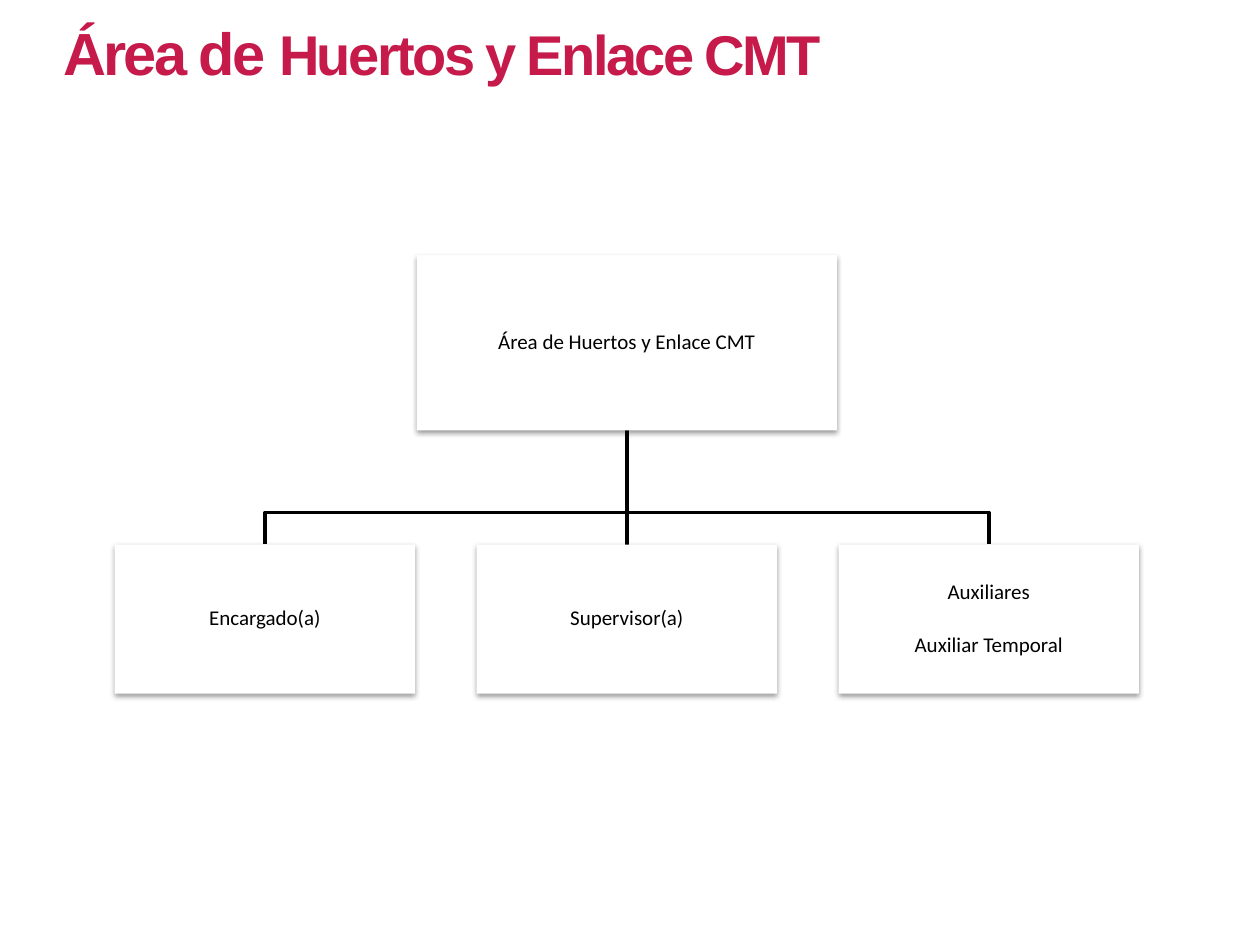
from lxml import etree
from pptx import Presentation, util as u
from pptx.dml.color import RGBColor
from pptx.enum import shapes, text
from pptx.oxml.ns import qn

CRIMSON = RGBColor(0xC5, 0x1A, 0x4A)
BLACK = RGBColor(0, 0, 0)
WHITE = RGBColor(0xFF, 0xFF, 0xFF)

HEADING = [("Área de ", 34), ("Huertos y Enlace CMT", 32)]
AREA = ["Área de Huertos y Enlace CMT"]
STAFF = [["Encargado(a)"], ["Supervisor(a)"], ["Auxiliares", "Auxiliar Temporal"]]

CARD_FRAME = dict(word_wrap=True, vertical_anchor=text.MSO_ANCHOR.MIDDLE,
                  **{f"margin_{side}": u.Inches(0.01)
                     for side in ("left", "right", "top", "bottom")})
CARD_FONT = dict(name="Calibri", size=u.Pt(12))
HEADING_FRAME = dict(word_wrap=True, vertical_anchor=text.MSO_ANCHOR.MIDDLE,
                     auto_size=text.MSO_AUTO_SIZE.NONE)


def apply(target, values):
    for key, value in values.items():
        setattr(target, key, value)


def add_heading(slide, left, top, width, height):
    title = slide.shapes.title
    apply(title, dict(left=left, top=top, width=width, height=height))
    apply(title.text_frame, HEADING_FRAME)
    line = title.text_frame.paragraphs[0]
    line.alignment = text.PP_ALIGN.LEFT
    for words, size in HEADING:
        run = line.add_run()
        run.text = words
        apply(run.font, dict(name="Arial", size=u.Pt(size), bold=True))
        run.font.color.rgb = CRIMSON
        run._r.get_or_add_rPr().set("spc", "-150")


def add_soft_shadow(card):
    card.shadow.inherit = False
    effects = card._element.spPr.find(qn("a:effectLst"))
    shadow = etree.SubElement(effects, qn("a:outerShdw"), blurRad=str(u.Pt(3.1)),
                              dist=str(u.Pt(1.6)), dir="5400000", rotWithShape="0")
    color = etree.SubElement(shadow, qn("a:srgbClr"), val=str(BLACK))
    etree.SubElement(color, qn("a:alpha"), val="38000")


def add_card(slide, left, top, width, height, roles):
    card = slide.shapes.add_shape(shapes.MSO_SHAPE.RECTANGLE, left, top, width, height)
    card.fill.solid()
    card.fill.fore_color.rgb = WHITE
    card.line.fill.background()
    add_soft_shadow(card)
    frame = card.text_frame
    apply(frame, CARD_FRAME)
    for index, role in enumerate(roles):
        line = frame.add_paragraph() if index else frame.paragraphs[0]
        apply(line, dict(text=role, alignment=text.PP_ALIGN.CENTER, line_spacing=0.9))
        if index:
            line.space_before = u.Pt(17)
        apply(line.font, CARD_FONT)
        line.font.color.rgb = BLACK


def add_branch(slide, start_x, start_y, end_x, end_y):
    """Link a parent to a child: straight below it, or with two bends."""
    if start_x == end_x:
        branch = slide.shapes.add_connector(shapes.MSO_CONNECTOR.STRAIGHT,
                                            start_x, start_y, end_x, end_y)
        etree.SubElement(branch._element.spPr, qn("a:effectLst"))
    else:
        bend_y = start_y + round((end_y - start_y) * 0.72)
        outline = slide.shapes.build_freeform(start_x, start_y)
        outline.add_line_segments([(start_x, bend_y), (end_x, bend_y), (end_x, end_y)],
                                  close=False)
        branch = outline.convert_to_shape()
        branch.fill.background()
        branch.shadow.inherit = False
    branch.line.color.rgb = BLACK
    branch.line.width = u.Pt(2)


def add_org_chart(slide, left, top, width, height):
    # Three equal columns with two gaps; the parent is centred above them
    gap = round(width * 0.06)
    staff_w = (width - gap * (len(STAFF) - 1)) // len(STAFF)
    area_w, area_h = round(width * 0.41), round(height * 0.4)
    staff_h = round(height * 0.34)
    staff_top = top + height - staff_h
    center = left + width // 2
    columns = [center + (i - len(STAFF) // 2) * (staff_w + gap)
               for i in range(len(STAFF))]

    # Branches lie behind the cards
    for column in columns:
        add_branch(slide, center, top + area_h, column, staff_top)
    add_card(slide, center - area_w // 2, top, area_w, area_h, AREA)
    for column, roles in zip(columns, STAFF):
        add_card(slide, column - staff_w // 2, staff_top, staff_w, staff_h, roles)


def main():
    deck = Presentation()
    deck.slide_width, deck.slide_height = u.Inches(10), u.Inches(7.5)
    wide, high = deck.slide_width, deck.slide_height
    slide = deck.slides.add_slide(deck.slide_layouts[5])
    add_heading(slide, round(wide * 0.04), round(high * 0.01),
                round(wide * 0.78), round(high * 0.09))
    add_org_chart(slide, u.Inches(0.91), round(high * 0.27),
                  u.Inches(8.13), u.Inches(3.48))
    deck.save("out.pptx")


if __name__ == "__main__":
    main()
